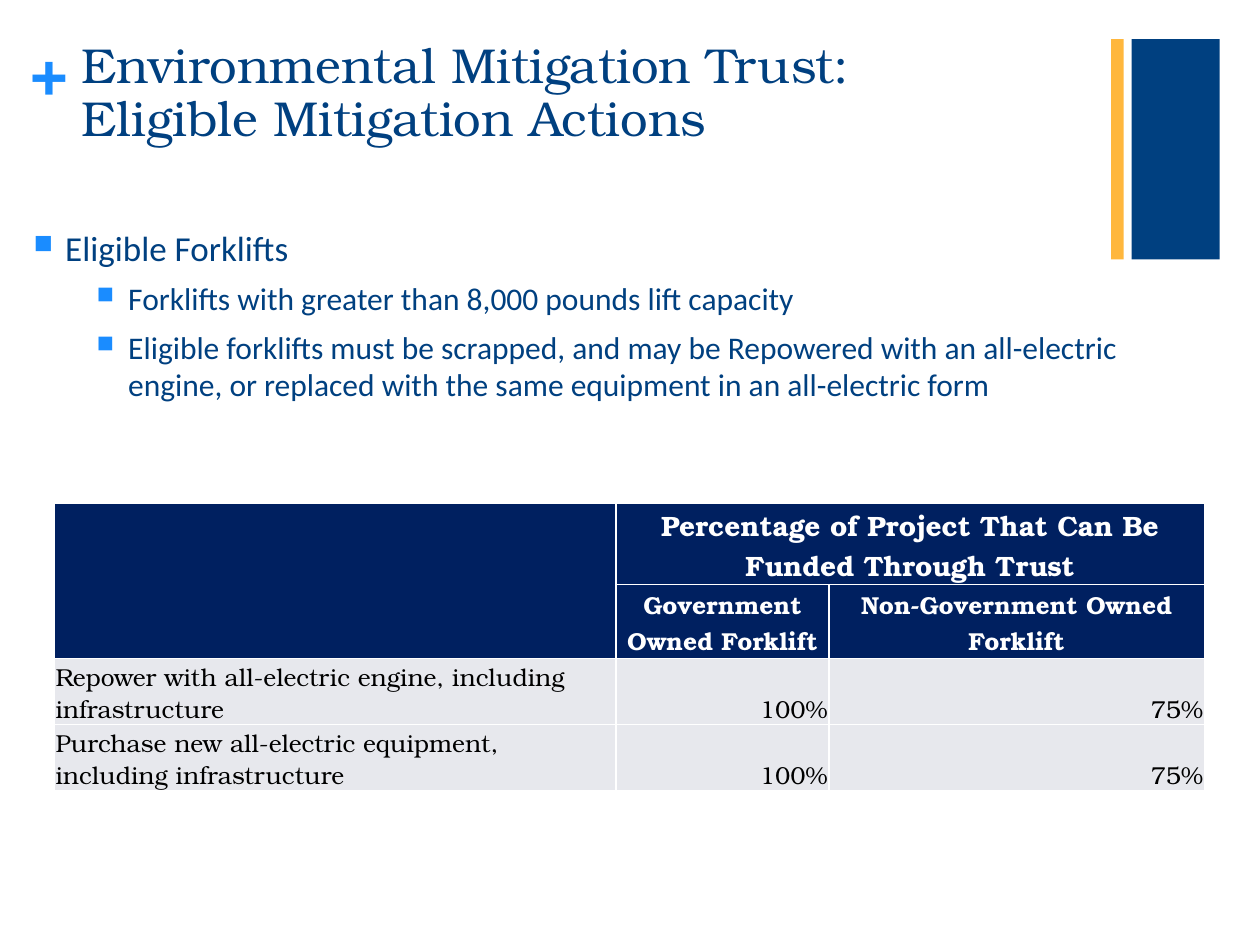
"""Build the slide on forklifts eligible under the Environmental Mitigation Trust."""
import pptx
import pptx.dml.color
import pptx.enum.shapes
import pptx.enum.text
import pptx.oxml.ns
import pptx.util
from lxml import etree

Pt = pptx.util.Pt
ALIGN = pptx.enum.text.PP_ALIGN
ANCHOR = pptx.enum.text.MSO_ANCHOR

THEME = {
    "serif": "TeX Gyre Bonum", "sans": "Calibri",
    "navy": "004080", "gold": "FFB73D", "bright": "1A8CFF",
    "header": "002060", "row": "E7E8ED", "white": "FFFFFF", "black": "000000",
    "plus": 36, "title": 28, "point": 20, "subpoint": 18, "span": 16, "cell": 14,
}

TITLE = "Environmental Mitigation Trust:\vEligible Mitigation Actions"
POINTS = [
    ("Eligible Forklifts", "point", 36),
    ("Forklifts with greater than 8,000 pounds lift capacity", "subpoint", 72),
    ("Eligible forklifts must be scrapped, and may be Repowered with an all-electric "
     "engine, or replaced with the same equipment in an all-electric form", "subpoint", 72),
]
ROWS = [
    ("", "Percentage of Project That Can Be Funded Through Trust", ""),
    ("", "Government Owned Forklift", "Non-Government Owned Forklift"),
    ("Repower with all-electric engine, including infrastructure", "100%", "75%"),
    ("Purchase new all-electric equipment, including infrastructure", "100%", "75%"),
]
MERGES = [((0, 0), (1, 0)), ((0, 1), (0, 2))]
BARS = [(646.6, 50.4, "navy"), (635, 7.2, "gold")]
COL_WIDTHS = [321, 121.7, 214.5]
ROW_HEIGHTS = [46.8, 42.3, 37.7, 37.7]


def rgb(name):
    return pptx.dml.color.RGBColor.from_string(THEME[name])


def sub(parent, tag, **attrs):
    return etree.SubElement(parent, pptx.oxml.ns.qn(tag), **attrs)


def write(p, text, size="cell", color="navy", font="serif", bold=False, align=ALIGN.LEFT):
    p.alignment = align
    p.text = text
    for r in p.runs:
        r.font.size = Pt(THEME[size])
        r.font.name = THEME[font]
        r.font.bold = bold
        r.font.color.rgb = rgb(color)


def add_box(s, x, y, w, h, inset=None):
    tf = s.shapes.add_textbox(Pt(x), Pt(y), Pt(w), Pt(h)).text_frame
    tf.word_wrap = True
    if inset is not None:
        tf.margin_left = tf.margin_right = tf.margin_top = tf.margin_bottom = Pt(inset)
    return tf


def add_bullet(p, indent):
    pPr = p._p.get_or_add_pPr()
    pPr.set("marL", str(Pt(indent)))
    pPr.set("indent", str(Pt(-18)))
    sub(sub(pPr, "a:buClr"), "a:srgbClr", val=THEME["bright"])
    sub(pPr, "a:buSzPct", val="75000")
    sub(pPr, "a:buChar", char="■")


def format_cell(cell, fill, anchor):
    cell.margin_left = cell.margin_right = cell.margin_top = Pt(0.72)
    cell.margin_bottom = 0
    cell.vertical_anchor = anchor
    tcPr = cell._tc.get_or_add_tcPr()
    for side in ("a:lnL", "a:lnR", "a:lnT", "a:lnB"):
        ln = sub(tcPr, side, w=str(Pt(1)))
        sub(sub(ln, "a:solidFill"), "a:srgbClr", val=THEME["white"])
    cell.fill.solid()
    cell.fill.fore_color.rgb = rgb(fill)


def add_funding_table(s):
    table = s.shapes.add_table(len(ROWS), len(COL_WIDTHS), Pt(31), Pt(287.3),
                               Pt(sum(COL_WIDTHS)), Pt(sum(ROW_HEIGHTS))).table
    for col, width in zip(table.columns, COL_WIDTHS):
        col.width = Pt(width)
    for i, (row, height, texts) in enumerate(zip(table.rows, ROW_HEIGHTS, ROWS)):
        row.height = Pt(height)
        head = i < 2
        for j, (cell, text) in enumerate(zip(row.cells, texts)):
            format_cell(cell, "header" if head else "row",
                        ANCHOR.MIDDLE if head else ANCHOR.BOTTOM)
            align = ALIGN.CENTER if head else ALIGN.RIGHT if j else ALIGN.LEFT
            write(cell.text_frame.paragraphs[0], text, size="cell" if i else "span",
                  color="white" if head else "black", bold=head, align=align)
    for first, last in MERGES:
        table.cell(*first).merge(table.cell(*last))


def main():
    prs = pptx.Presentation()
    prs.slide_width, prs.slide_height = Pt(720), Pt(540)
    s = prs.slides.add_slide(prs.slide_layouts[6])

    for x, width, color in BARS:
        sp = s.shapes.add_shape(pptx.enum.shapes.MSO_SHAPE.RECTANGLE,
                                Pt(x), Pt(22.3), Pt(width), Pt(126))
        sp.shadow.inherit = False
        sp.fill.solid()
        sp.fill.fore_color.rgb = rgb(color)
        sp.line.fill.background()

    tf = add_box(s, 17.3, 18, 20.9, 43.9, inset=0)
    write(tf.paragraphs[0], "+", size="plus", color="bright", bold=True)

    tf = add_box(s, 39.6, 20.2, 505.4, 83.5)
    write(tf.paragraphs[0], TITLE, size="title")
    tf.paragraphs[0].line_spacing = 0.9

    tf = add_box(s, -5.8, 126, 658, 406)
    for i, (text, size, indent) in enumerate(POINTS):
        p = tf.add_paragraph() if i else tf.paragraphs[0]
        write(p, text, size=size, font="sans")
        p.space_after = Pt(6)
        add_bullet(p, indent)

    add_funding_table(s)
    prs.save("out.pptx")


if __name__ == "__main__":
    main()
